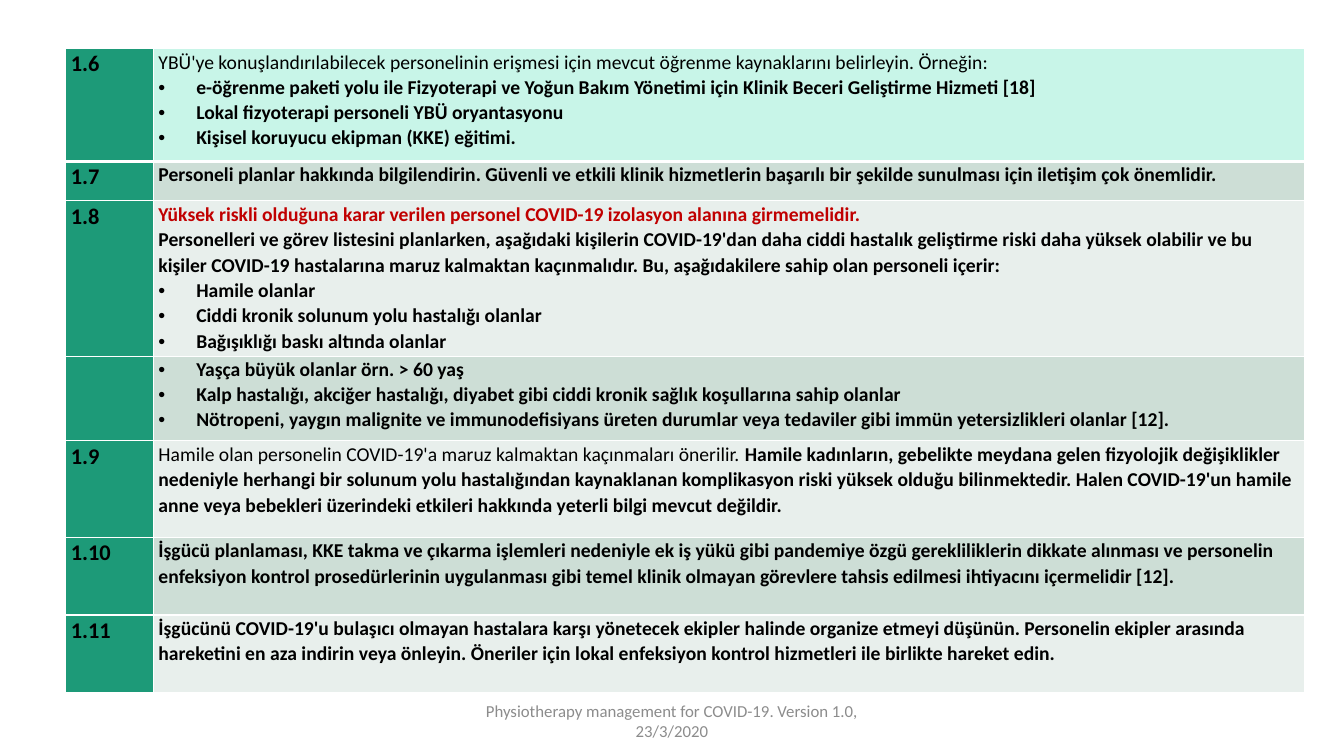
import pptx
import pptx.util
import pptx.dml.color
import pptx.enum.text
import pptx.oxml.ns
import lxml.etree

Pt = pptx.util.Pt
qn = pptx.oxml.ns.qn


def color(hex_text):
    return pptx.dml.color.RGBColor.from_string(hex_text)


class Deck:
    font = "Calibri"
    black, red, grey, white = "000000", "C00000", "8C8C8C", "FFFFFF"
    number_fill, first_fill = "1D9A78", "C8F5E8"
    bands = ("E8EFEC", "CDDED6")
    indent = 27

    def __init__(self, prs):
        self.s = prs.slides.add_slide(prs.slide_layouts[6])

    def run(self, p, text, size, hex_text, bold=False):
        r = p.add_run()
        r.text = text
        r.font.name, r.font.size, r.font.bold = self.font, Pt(size), bold
        r.font.color.rgb = color(hex_text)

    def bullet(self, p):
        pPr = p._p.get_or_add_pPr()
        pPr.set("marL", str(Pt(self.indent)))
        pPr.set("indent", str(-Pt(self.indent)))
        lxml.etree.SubElement(pPr, qn("a:buFont"), typeface="Arial")
        lxml.etree.SubElement(pPr, qn("a:buChar"), char="•")

    def borders(self, cell, top, bottom):
        tcPr = cell._tc.get_or_add_tcPr()
        for side, width in (("L", 1), ("R", 1), ("T", top), ("B", bottom)):
            ln = lxml.etree.SubElement(tcPr, qn("a:ln" + side), w=str(Pt(width)))
            fill = lxml.etree.SubElement(ln, qn("a:solidFill"))
            lxml.etree.SubElement(fill, qn("a:srgbClr"), val=self.white)

    def cell(self, cell, paragraphs, size, fill, top, bottom):
        """Each paragraph is (is_bullet, [(text, bold, colour), ...])."""
        self.borders(cell, top, bottom)
        cell.fill.solid()
        cell.fill.fore_color.rgb = color(fill)
        cell.margin_left = cell.margin_right = Pt(3.6)
        cell.margin_top = cell.margin_bottom = 0
        tf = cell.text_frame
        for i, (is_bullet, runs) in enumerate(paragraphs):
            p = tf.add_paragraph() if i else tf.paragraphs[0]
            p.line_spacing = 1.06 if is_bullet else 1.07
            if is_bullet:
                self.bullet(p)
            for text, bold, hex_text in runs:
                self.run(p, text, size, hex_text, bold)

    def table(self, left, top, widths, rows):
        frame = self.s.shapes.add_table(len(rows), len(widths), Pt(left), Pt(top),
                                        Pt(sum(widths)), Pt(sum(row[0] for row in rows)))
        tbl = frame.table
        for column, width in zip(tbl.columns, widths):
            column.width = Pt(width)
        for i, (height, number, paragraphs) in enumerate(rows):
            tbl.rows[i].height = Pt(height)
            # A thick rule separates the first row from the rest
            rules = (3 if i == 1 else 1, 3 if i == 0 else 1)
            label = [(False, [(number, True, self.black)])] if number else []
            self.cell(tbl.cell(i, 0), label, 16, self.number_fill, *rules)
            fill = self.bands[i % 2] if i else self.first_fill
            self.cell(tbl.cell(i, 1), paragraphs, 14, fill, *rules)

    def footer(self, left, top, width, height, text):
        tf = self.s.shapes.add_textbox(Pt(left), Pt(top), Pt(width), Pt(height)).text_frame
        tf.word_wrap = True
        tf.vertical_anchor = pptx.enum.text.MSO_ANCHOR.MIDDLE
        p = tf.paragraphs[0]
        p.alignment = pptx.enum.text.PP_ALIGN.CENTER
        self.run(p, text, 12, self.grey)


def plain(text):
    return (text, False, Deck.black)


def bold(text, hex_text=Deck.black):
    return (text, True, hex_text)


def para(*runs):
    return (False, runs)


def bullets(*texts):
    return [(True, [bold(text)]) for text in texts]


# Recommendations: row height, number, paragraphs
ROWS = [
    (80.6, "1.6", [
        para(plain("YBÜ'ye konuşlandırılabilecek personelinin erişmesi için mevcut öğrenme "
                   "kaynaklarını belirleyin. Örneğin:")),
        *bullets("e-öğrenme paketi yolu ile Fizyoterapi ve Yoğun Bakım Yönetimi için Klinik "
                 "Beceri Geliştirme Hizmeti [18]",
                 "Lokal fizyoterapi personeli YBÜ oryantasyonu",
                 "Kişisel koruyucu ekipman (KKE) eğitimi.")]),
    (28.1, "1.7", [
        para(bold("Personeli planlar hakkında bilgilendirin. Güvenli ve etkili klinik hizmetlerin "
                  "başarılı bir şekilde sunulması için iletişim çok önemlidir."))]),
    (110.9, "1.8", [
        para(bold("Yüksek riskli olduğuna karar verilen personel COVID-19 izolasyon alanına "
                  "girmemelidir.", Deck.red)),
        para(bold("Personelleri ve görev listesini planlarken, aşağıdaki kişilerin COVID-19'dan "
                  "daha ciddi hastalık geliştirme riski daha yüksek olabilir ve bu kişiler "
                  "COVID-19 hastalarına maruz kalmaktan kaçınmalıdır. Bu, aşağıdakilere sahip "
                  "olan personeli içerir:")),
        *bullets("Hamile olanlar",
                 "Ciddi kronik solunum yolu hastalığı olanlar",
                 "Bağışıklığı baskı altında olanlar")]),
    (60.5, "", bullets(
        "Yaşça büyük olanlar örn. > 60 yaş",
        "Kalp hastalığı, akciğer hastalığı, diyabet gibi ciddi kronik sağlık koşullarına sahip "
        "olanlar",
        "Nötropeni, yaygın malignite ve immunodefisiyans üreten durumlar veya tedaviler gibi "
        "immün yetersizlikleri olanlar [12].")),
    (69.1, "1.9", [
        para(plain("Hamile olan personelin COVID-19'a maruz kalmaktan kaçınmaları önerilir. "),
             bold("Hamile kadınların, gebelikte meydana gelen fizyolojik değişiklikler nedeniyle "
                  "herhangi bir solunum yolu hastalığından kaynaklanan komplikasyon riski yüksek "
                  "olduğu bilinmektedir. Halen COVID-19'un hamile anne veya bebekleri üzerindeki "
                  "etkileri hakkında yeterli bilgi mevcut değildir."))]),
    (55.4, "1.10", [
        para(bold("İşgücü planlaması, KKE takma ve çıkarma işlemleri nedeniyle ek iş yükü gibi "
                  "pandemiye özgü gerekliliklerin dikkate alınması ve personelin enfeksiyon "
                  "kontrol prosedürlerinin uygulanması gibi temel klinik olmayan görevlere tahsis "
                  "edilmesi ihtiyacını içermelidir [12]."))]),
    (55.4, "1.11", [
        para(bold("İşgücünü COVID-19'u bulaşıcı olmayan hastalara karşı yönetecek ekipler halinde "
                  "organize etmeyi düşünün. Personelin ekipler arasında hareketini en aza indirin "
                  "veya önleyin. Öneriler için lokal enfeksiyon kontrol hizmetleri ile birlikte "
                  "hareket edin."))]),
]


def main():
    prs = pptx.Presentation()
    prs.slide_width, prs.slide_height = Pt(960), Pt(540)
    deck = Deck(prs)
    deck.table(47, 34.8, (62.6, 822.2), ROWS)
    deck.footer(318, 500.5, 324, 28.8,
                "Physiotherapy management for COVID-19. Version 1.0, 23/3/2020")
    prs.save("out.pptx")


if __name__ == "__main__":
    main()
